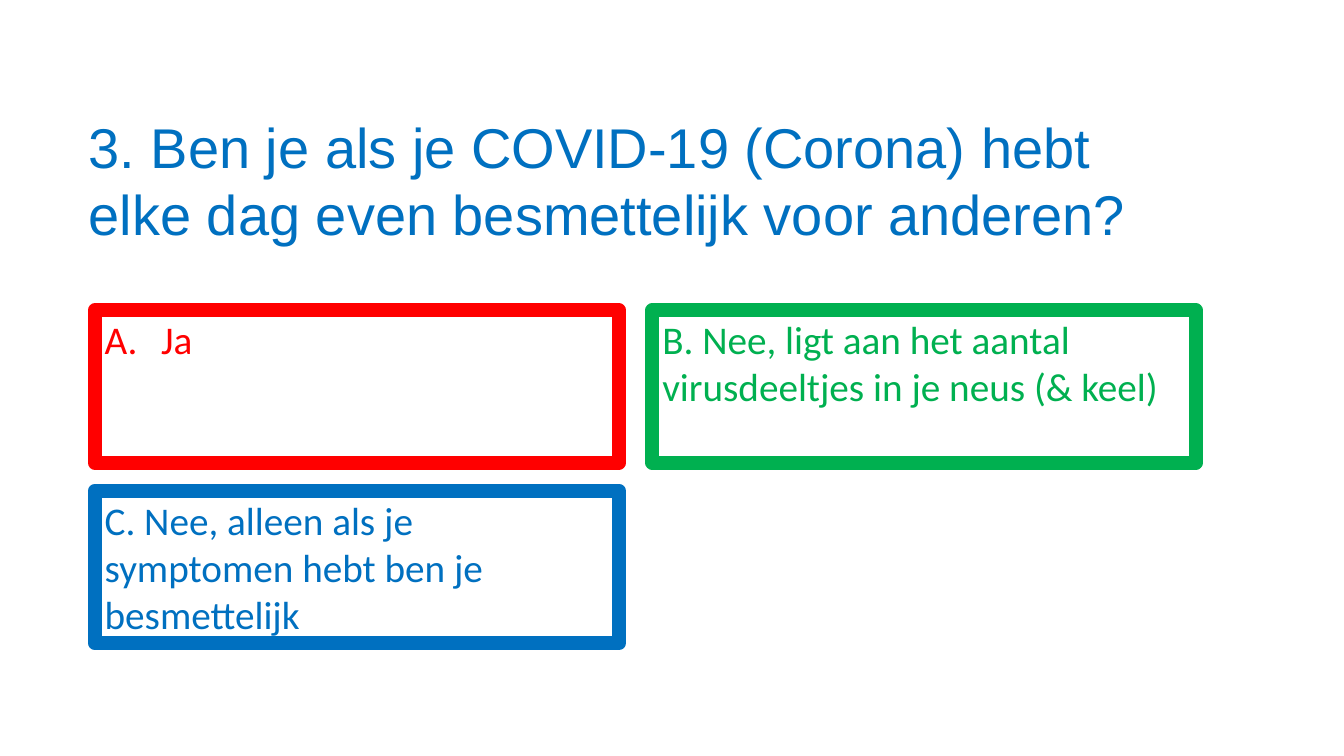
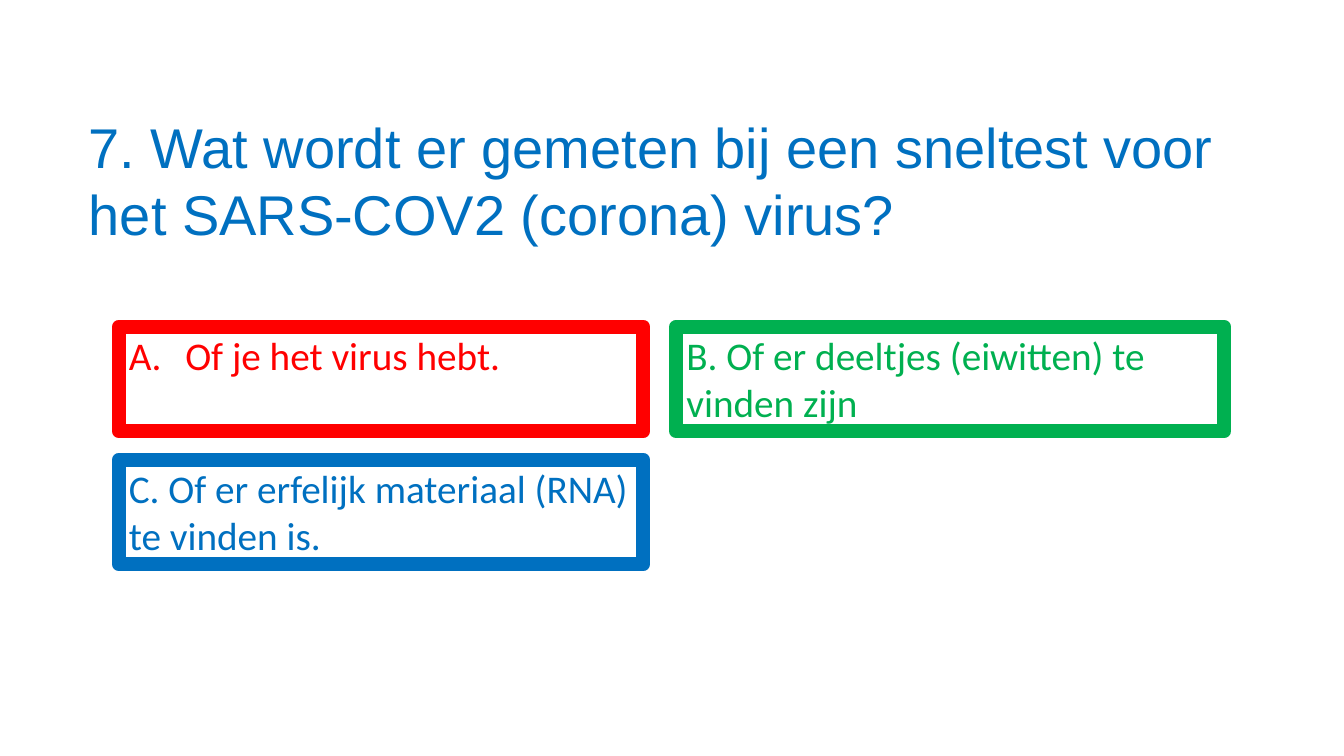
import pptx
import pptx.dml.color
import pptx.enum.shapes
import pptx.enum.text
import pptx.oxml.ns
import pptx.util
import lxml.etree

PX = 9144
RED, GREEN, BLUE = "FF0000", "00B050", "0070C0"
TITLE_ONLY = 5
ANSWER_WIDTH = 520
COLUMN_GAP = 33
ROW_GAP = 28
NUMBER_INDENT = 56

QUESTIONS = [
    {
        "title": ["3. Ben je als je COVID-19 (Corona) hebt",
                  "elke dag even besmettelijk voor anderen?"],
        "answers": ["Ja",
                    "B. Nee, ligt aan het aantal virusdeeltjes in je neus (& keel)",
                    "C. Nee, alleen als je symptomen hebt ben je besmettelijk"],
        "left": 94, "top": 308, "height": 151, "wide": 539,
    },
    {
        "title": ["7. Wat wordt er gemeten bij een sneltest voor",
                  "het SARS-COV2 (corona) virus?"],
        "answers": ["Of je het virus hebt.",
                    "B. Of er deeltjes (eiwitten) te vinden zijn",
                    "C. Of er erfelijk materiaal (RNA) te vinden is."],
        "left": 118, "top": 324, "height": 104, "wide": 543,
    },
]


def px(length):
    return pptx.util.Emu(length * PX)


def color(value):
    return pptx.dml.color.RGBColor.from_string(value)


def add_numbering(para):
    properties = para._p.get_or_add_pPr()
    properties.set("marL", str(px(NUMBER_INDENT)))
    properties.set("indent", str(px(-NUMBER_INDENT)))
    number = lxml.etree.SubElement(properties, pptx.oxml.ns.qn("a:buAutoNum"))
    number.set("type", "alphaUcPeriod")


def write_text(frame, lines, size, font, fill, anchor, spacing=None, numbered=False):
    frame.word_wrap = True
    frame.auto_size = pptx.enum.text.MSO_AUTO_SIZE.NONE
    frame.vertical_anchor = anchor
    for index, line in enumerate(lines):
        para = frame.paragraphs[0] if index == 0 else frame.add_paragraph()
        para.alignment = pptx.enum.text.PP_ALIGN.LEFT
        if spacing:
            para.line_spacing = pptx.util.Pt(spacing)
        if numbered:
            add_numbering(para)
        span = para.add_run()
        span.text = line
        span.font.size = pptx.util.Pt(size)
        span.font.name = font
        span.font.color.rgb = color(fill)


def set_title(page, lines):
    title = page.shapes.title
    title.left, title.top, title.width, title.height = map(px, (78, 105, 1245, 145))
    write_text(title.text_frame, lines, size=40, font="Arial", fill=BLUE,
               anchor=pptx.enum.text.MSO_ANCHOR.BOTTOM, spacing=48)


def add_answer(page, text, left, top, width, height, accent, numbered=False):
    box = page.shapes.add_shape(pptx.enum.shapes.MSO_SHAPE.RECTANGLE,
                                px(left), px(top), px(width), px(height))
    box.shadow.inherit = False
    box.fill.background()
    box.line.color.rgb = color(accent)
    box.line.width = pptx.util.Pt(10)
    write_text(box.text_frame, [text], size=28, font="Calibri", fill=accent,
               anchor=pptx.enum.text.MSO_ANCHOR.TOP, numbered=numbered)


def add_question(deck, question):
    page = deck.slides.add_slide(deck.slide_layouts[TITLE_ONLY])
    set_title(page, question["title"])
    left, top, height = question["left"], question["top"], question["height"]
    right_column = left + ANSWER_WIDTH + COLUMN_GAP
    second_row = top + height + ROW_GAP
    first, second, third = question["answers"]
    add_answer(page, first, left, top, ANSWER_WIDTH, height, RED, numbered=True)
    add_answer(page, third, left, second_row, ANSWER_WIDTH, height, BLUE)
    add_answer(page, second, right_column, top, question["wide"], height, GREEN)


def main():
    deck = pptx.Presentation()
    deck.slide_width, deck.slide_height = px(1333), px(750)
    for question in QUESTIONS:
        add_question(deck, question)
    deck.save("out.pptx")


if __name__ == "__main__":
    main()
